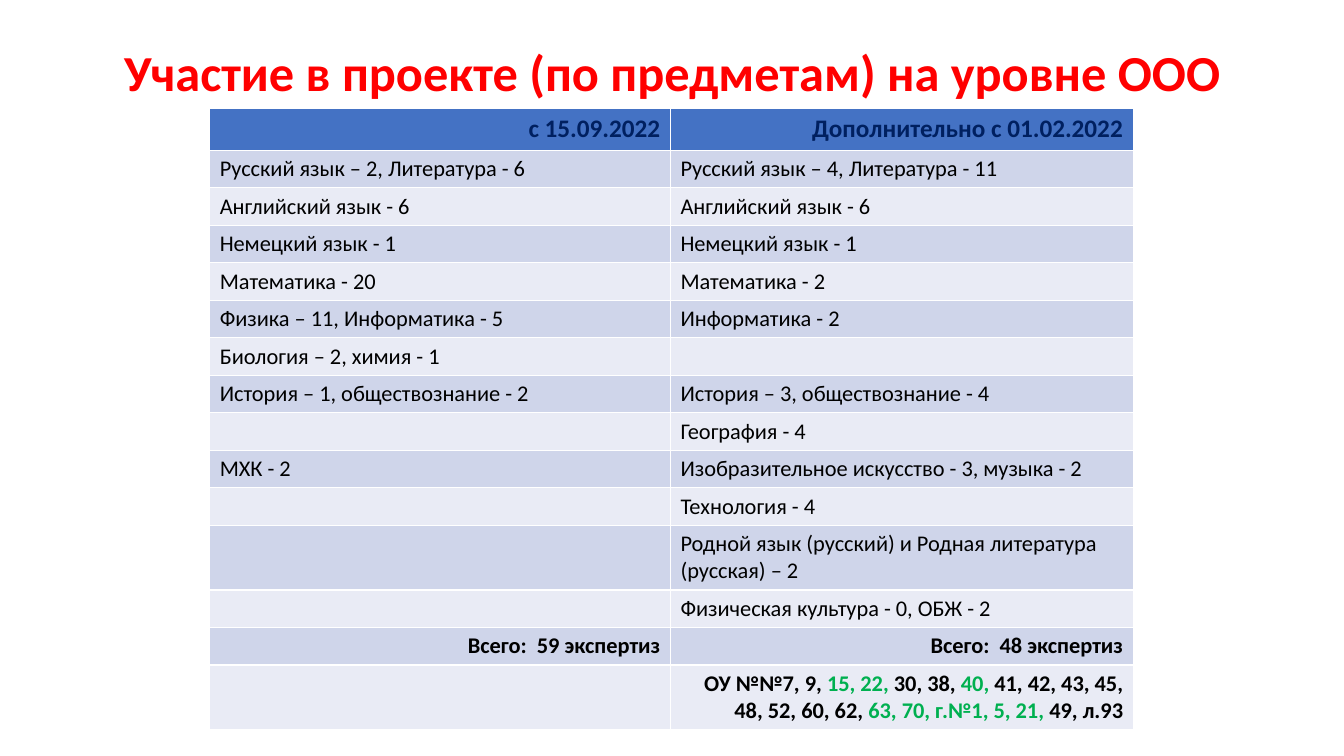
from pptx import Presentation
from pptx.dml.color import RGBColor
from pptx.enum.text import MSO_ANCHOR, MSO_AUTO_SIZE, PP_ALIGN
from pptx.util import Inches, Pt

LEFT, CENTER, RIGHT = PP_ALIGN.LEFT, PP_ALIGN.CENTER, PP_ALIGN.RIGHT
MIDDLE, NO_FIT = MSO_ANCHOR.MIDDLE, MSO_AUTO_SIZE.NONE
TITLE_ONLY = 5

RED, NAVY, BLACK, GREEN = "FF0000", "002060", "000000", "00B050"
BLUE, DARK, LIGHT = "4472C4", "CFD5EA", "E9EBF5"

TITLE = dict(size=Pt(36), bold=True, name="Calibri")
HEAD = dict(size=Pt(18), bold=True, name="Calibri")
BODY = dict(size=Pt(16), bold=False, name="Calibri")
TOTAL = dict(BODY, bold=True)

HEADS = ("с 15.09.2022", "Дополнительно с 01.02.2022")
SUBJECTS = [
    ("Русский язык – 2, Литература - 6", "Русский язык – 4, Литература - 11"),
    ("Английский язык - 6", "Английский язык - 6"),
    ("Немецкий язык - 1", "Немецкий язык - 1"),
    ("Математика - 20", "Математика - 2"),
    ("Физика – 11, Информатика - 5", "Информатика - 2"),
    ("Биология – 2, химия - 1", ""),
    ("История – 1, обществознание - 2", "История – 3, обществознание - 4"),
    ("", "География - 4"),
    ("МХК - 2", "Изобразительное искусство - 3, музыка - 2"),
    ("", "Технология - 4"),
    ("", "Родной язык (русский) и Родная литература (русская) – 2"),
    ("", "Физическая культура - 0, ОБЖ - 2"),
]
TOTALS = ("Всего:  59 экспертиз", "Всего:  48 экспертиз")
# Parts alternate between black and green
SCHOOLS = ("ОУ №№7, 9, ", "15, 22,", " 30, 38, ", "40, ",
           "41, 42, 43, 45, 48, 52, 60, 62, ", "63, 70, г.№1, 5, 21, ", "49, л.93")


def color(code):
    return RGBColor.from_string(code)


def write(para, parts, look, align):
    """Fill a paragraph with (text, colour) parts."""
    para.alignment = align
    for text, code in parts:
        run = para.add_run()
        run.text = text
        for key, value in look.items():
            setattr(run.font, key, value)
        run.font.color.rgb = color(code)
    if not parts:
        # An empty cell keeps the line height of its row
        end = para._p.get_or_add_endParaRPr()
        end.set("sz", str(int(look["size"].pt * 100)))


def place(shape, box):
    shape.left, shape.top, shape.width, shape.height = map(Inches, box)


def add_title(slide, box):
    title = slide.shapes.title
    place(title, box)
    frame = title.text_frame
    frame.word_wrap, frame.auto_size = True, NO_FIT
    frame.vertical_anchor = MIDDLE
    para = frame.paragraphs[0]
    para.line_spacing = 0.9
    write(para, [("Участие в проекте (по предметам) на уровне ООО", RED)], TITLE, CENTER)


def plain(texts, code):
    return [[(text, code)] if text else [] for text in texts]


def add_grid(slide, box):
    # Rows: cell parts, look, alignment
    rows = [(plain(HEADS, NAVY), HEAD, RIGHT)]
    rows += [(plain(pair, BLACK), BODY, LEFT) for pair in SUBJECTS]
    rows.append((plain(TOTALS, BLACK), TOTAL, RIGHT))
    schools = [(text, (BLACK, GREEN)[i % 2]) for i, text in enumerate(SCHOOLS)]
    rows.append(([[], schools], TOTAL, RIGHT))

    # Sizes: the header, two double rows, the rest equal
    table = slide.shapes.add_table(len(rows), 2, *map(Inches, box)).table
    for col, width in zip(table.columns, (4.57, 4.59)):
        col.width = Inches(width)
    tall = {0: 0.41, 11: 0.64, 14: 0.64}

    for r, (cells, look, align) in enumerate(rows):
        table.rows[r].height = Inches(tall.get(r, 0.37))
        fill = BLUE if r == 0 else (LIGHT, DARK)[r % 2]
        for c, parts in enumerate(cells):
            cell = table.cell(r, c)
            cell.fill.solid()
            cell.fill.fore_color.rgb = color(fill)
            write(cell.text_frame.paragraphs[0], parts, look, align)


def main():
    deck = Presentation()
    deck.slide_width, deck.slide_height = Inches(13.33), Inches(7.5)
    slide = deck.slides.add_slide(deck.slide_layouts[TITLE_ONLY])
    add_title(slide, (0.92, 0.41, 11.5, 0.67))
    add_grid(slide, (2.08, 1.08, 9.16, 6.13))
    deck.save("out.pptx")


if __name__ == "__main__":
    main()
